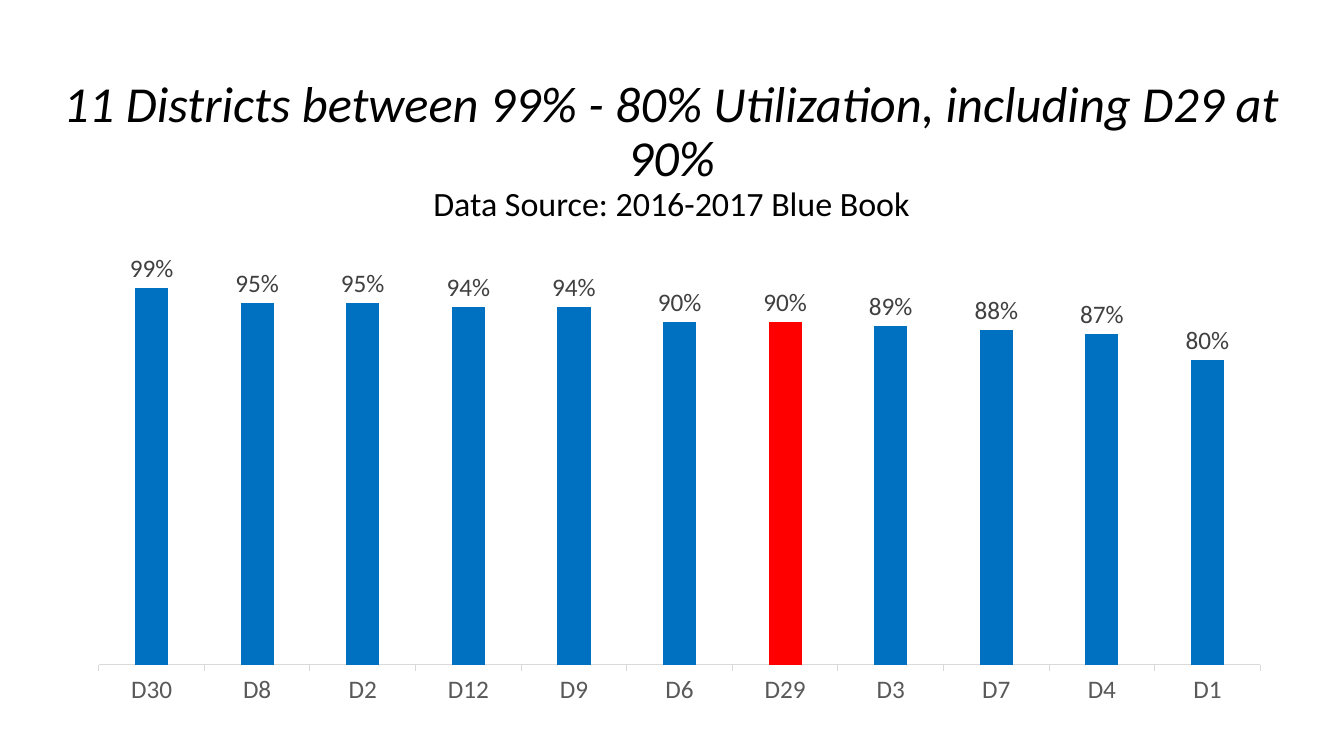
from pptx import Presentation
from pptx import util as u
from pptx.chart.data import CategoryChartData
from pptx.dml.color import RGBColor
from pptx.enum import chart as c, text

# Content
HEADING = [
    ("11 Districts between 99% - 80% Utilization, including D29 at 90%", {"size": u.Pt(36), "italic": True}),
    ("Data Source: 2016-2017 Blue Book", {"size": u.Pt(24.3), "italic": False}),
]
UTILIZATION = {
    "D30": 0.99, "D8": 0.95, "D2": 0.95, "D12": 0.94, "D9": 0.94, "D6": 0.9,
    "D29": 0.9, "D3": 0.89, "D7": 0.88, "D4": 0.87, "D1": 0.8,
}
HIGHLIGHT = "D29"
COLORS = {"heading": "000000", "bar": "0070C0", "highlight": "FF0000",
          "value": "404040", "district": "595959", "axis": "D9D9D9"}
FONT = "Calibri"


def apply(target, values):
    for name, value in values.items():
        setattr(target, name, value)


def style_font(font, color, **values):
    apply(font, {"name": FONT, **values})
    font.color.rgb = RGBColor.from_string(COLORS[color])


def paint(fill, color):
    fill.solid()
    fill.fore_color.rgb = RGBColor.from_string(COLORS[color])


def inches(*lengths):
    return [u.Inches(length) for length in lengths]


presentation = Presentation()
apply(presentation, {"slide_width": u.Inches(13.33), "slide_height": u.Inches(7.5)})
slide = presentation.slides.add_slide(presentation.slide_layouts[6])

# Heading
frame = slide.shapes.add_textbox(*inches(0.1, 0.51, 13.12, 1.45)).text_frame
apply(frame, {"word_wrap": True, "vertical_anchor": text.MSO_ANCHOR.TOP,
              "margin_top": u.Inches(0.27), "margin_bottom": 0})
for index, (line, values) in enumerate(HEADING):
    paragraph = frame.add_paragraph() if index else frame.paragraphs[0]
    apply(paragraph, {"alignment": text.PP_ALIGN.CENTER, "line_spacing": 0.9})
    run = paragraph.add_run()
    run.text = line
    style_font(run.font, "heading", **values)

# Utilization chart
data = CategoryChartData(number_format="0%")
data.categories = list(UTILIZATION)
data.add_series("Series 1", list(UTILIZATION.values()))
chart = slide.shapes.add_chart(
    c.XL_CHART_TYPE.COLUMN_CLUSTERED, *inches(0.74, 1.96, 12, 5.14), data).chart
apply(chart, {"has_legend": False, "has_title": False})
style_font(chart.font, "heading", size=u.Pt(10))

# Bars
plot = chart.plots[0]
apply(plot, {"gap_width": 219, "overlap": -27, "vary_by_categories": False,
             "has_data_labels": True})
series = plot.series[0]
paint(series.format.fill, "bar")
paint(series.points[list(UTILIZATION).index(HIGHLIGHT)].format.fill, "highlight")

# Value labels
labels = plot.data_labels
apply(labels, {"show_value": True, "position": c.XL_LABEL_POSITION.OUTSIDE_END,
               "number_format": "0%", "number_format_is_linked": False})
style_font(labels.font, "value", size=u.Pt(18))

# Axes
apply(chart.value_axis, {"visible": False, "has_major_gridlines": False,
                         "minimum_scale": 0, "maximum_scale": 1.2, "major_unit": 0.2})
district_axis = chart.category_axis
apply(district_axis, {"major_tick_mark": c.XL_TICK_MARK.OUTSIDE,
                      "minor_tick_mark": c.XL_TICK_MARK.NONE,
                      "has_major_gridlines": False})
style_font(district_axis.tick_labels.font, "district", size=u.Pt(18))
axis_line = district_axis.format.line
axis_line.width = u.Pt(0.75)
paint(axis_line.fill, "axis")

presentation.save("out.pptx")
